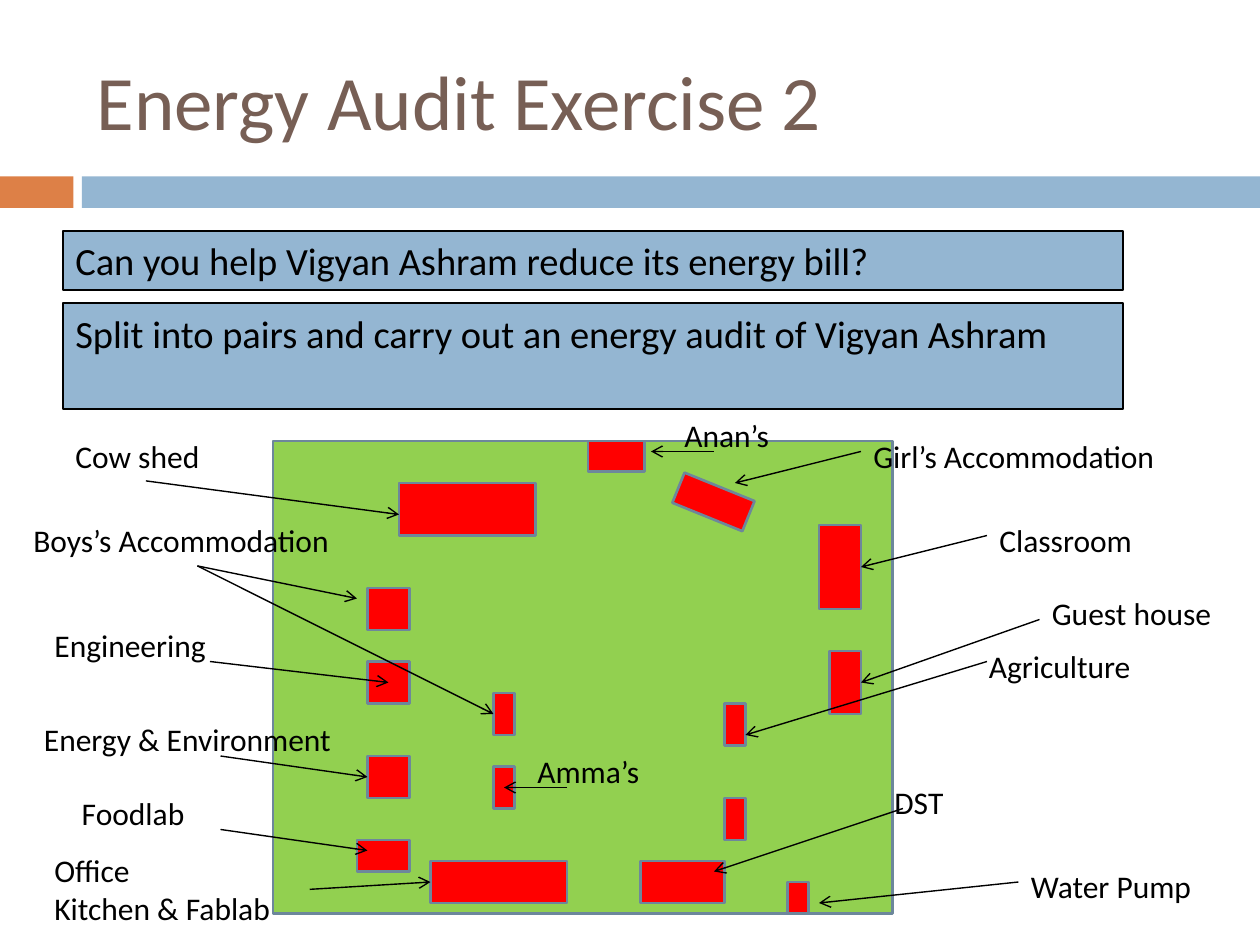
from lxml.etree import SubElement
from pptx import Presentation
from pptx.dml.color import RGBColor
from pptx.enum.shapes import MSO_CONNECTOR as Connector, MSO_SHAPE as Shape
from pptx.enum.text import MSO_ANCHOR as Anchor, PP_ALIGN as Align
from pptx.oxml.ns import qn
from pptx.util import Cm, Pt

COLORS = {"accent": "DD8047", "blue": "94B6D2", "title": "775F55",
          "ink": "000000", "land": "92D050", "building": "FF0000",
          "outline": "6D879B"}
FONT = "Calibri"
GRID = 2.54 / 12  # one grid step in centimetres: the slide is 120 by 90 steps


def steps(*counts):
    """Turn grid steps into lengths."""
    return [Cm(count * GRID) for count in counts]


def color(name):
    """Look up a colour of the palette."""
    return RGBColor.from_string(COLORS[name])


def write(frame, text, size=18, ink="ink", anchor=Anchor.TOP):
    """Fill a text frame, one paragraph per line, with the given format."""
    frame.text = text
    frame.word_wrap = True
    frame.vertical_anchor = anchor
    for paragraph in frame.paragraphs:
        paragraph.alignment = Align.LEFT
        font = paragraph.font
        font.name, font.size = FONT, Pt(size)
        font.color.rgb = color(ink)
        for run in paragraph.runs:
            run.font.name, run.font.size = FONT, Pt(size)
            run.font.color.rgb = color(ink)


class SitePlan:
    """Draws the elements of the plan on one slide."""

    def __init__(self, slide):
        """Keep the slide to draw on."""
        self.slide = slide
        self.shapes = slide.shapes

    def title(self, text, *box):
        """Place and fill the title placeholder."""
        heading = self.shapes.title
        heading.left, heading.top, heading.width, heading.height = steps(*box)
        write(heading.text_frame, text, size=44, ink="title",
              anchor=Anchor.MIDDLE)

    def block(self, box, fill, outline=None, weight=1.5, turn=0):
        """Add a filled rectangle."""
        block = self.shapes.add_shape(Shape.RECTANGLE, *steps(*box))
        block.shadow.inherit = False
        block.rotation = turn
        block.fill.solid()
        block.fill.fore_color.rgb = color(fill)
        if outline:
            block.line.color.rgb = color(outline)
            block.line.width = Pt(weight)
        else:
            block.line.fill.background()
        return block

    def banner(self, text, *box):
        """Add a bordered rectangle with a line of text."""
        banner = self.block(box, "blue", "ink", 1.25)
        write(banner.text_frame, text, size=22)

    def label(self, text, *box):
        """Add the name of a building."""
        name = self.shapes.add_textbox(*steps(*box))
        write(name.text_frame, text)

    def arrow(self, *ends):
        """Add an arrow from a label to its building."""
        arrow = self.shapes.add_connector(Connector.STRAIGHT, *steps(*ends))
        arrow.line.color.rgb = color("ink")
        arrow.line.width = Pt(0.79)
        SubElement(arrow.line._get_or_add_ln(), qn("a:tailEnd"), type="arrow")
        SubElement(arrow._element.spPr, qn("a:effectLst"))


# Left, top, width, height and optional rotation
BUILDINGS = [
    (38, 46, 13, 5), (56, 42, 5.4, 2.9), (66.4, 44.2, 3.1, 7.2, 292.1),
    (78, 50, 4, 8), (79, 62, 3, 6),
    (35, 56, 4, 4), (35, 63, 4, 4), (35, 72, 4, 4), (34, 80, 5, 3),
    (47, 66, 2, 4), (47, 73, 2, 4), (69, 67, 2, 4), (69, 76, 2, 4),
    (41, 82, 13, 4), (61, 82, 8, 4), (75, 84, 2, 3),
]

# Name, place of the label, and the arrows that leave it
PLACES = [
    ("Cow shed", (6, 41, 16, 4.8), [(13.9, 45.8, 38, 49)]),
    ("Boys’s Accommodation", (2, 49, 34, 4.8),
     [(18.8, 53.9, 34, 57), (18.8, 53.9, 47, 68)]),
    ("Engineering", (4, 59, 18.6, 4.8), [(20, 63, 37, 65)]),
    ("Energy & Environment", (3, 68, 33, 4.8), [(21, 72, 35, 74)]),
    ("Foodlab", (6.6, 75, 13.3, 4.8), [(21, 79, 35, 81)]),
    ("Office\nKitchen & Fablab", (4, 80.5, 25.5, 8.5),
     [(29.5, 84.7, 41, 84)]),
    ("Anan’s", (64, 39, 12.5, 4.8), [(68, 43, 62, 43)]),
    ("Girl’s Accommodation", (82, 41, 31.7, 4.8), [(82, 43, 70, 46)]),
    ("Classroom", (94, 49, 17, 4.8), [(94, 51, 82, 54)]),
    ("Guest house", (99, 56, 19.6, 4.8), [(99, 59, 82, 65)]),
    ("Agriculture", (93, 61, 17, 4.8), [(94, 63, 71, 70)]),
    ("Amma’s", (50, 71, 14, 4.8), [(54, 75, 48, 75)]),
    ("DST", (84, 74, 8.5, 4.8), [(86, 77, 68, 83)]),
    ("Water Pump", (97, 82, 19.2, 4.8), [(97, 84, 78, 86)]),
]


def main():
    """Build the slide and save it."""
    deck = Presentation()
    deck.slide_width, deck.slide_height = steps(120, 90)
    plan = SitePlan(deck.slides.add_slide(deck.slide_layouts[5]))

    plan.block((0, 16.8, 7, 3), "accent")
    plan.block((7.8, 16.8, 112.2, 3), "blue")
    plan.title("Energy Audit Exercise 2", 8, 3, 107, 13)
    plan.banner("Can you help Vigyan Ashram reduce its energy bill?",
                6, 22, 101, 5.6)
    plan.banner("Split into pairs and carry out an energy audit of "
                "Vigyan Ashram", 6, 28.9, 101, 10.1)

    plan.block((26, 42, 59, 45), "land", "outline")
    for left, top, width, height, *turn in BUILDINGS:
        plan.block((left, top, width, height), "building", "outline",
                   turn=sum(turn))
    for name, box, arrows in PLACES:
        plan.label(name, *box)
        for ends in arrows:
            plan.arrow(*ends)

    deck.save("out.pptx")


main()
